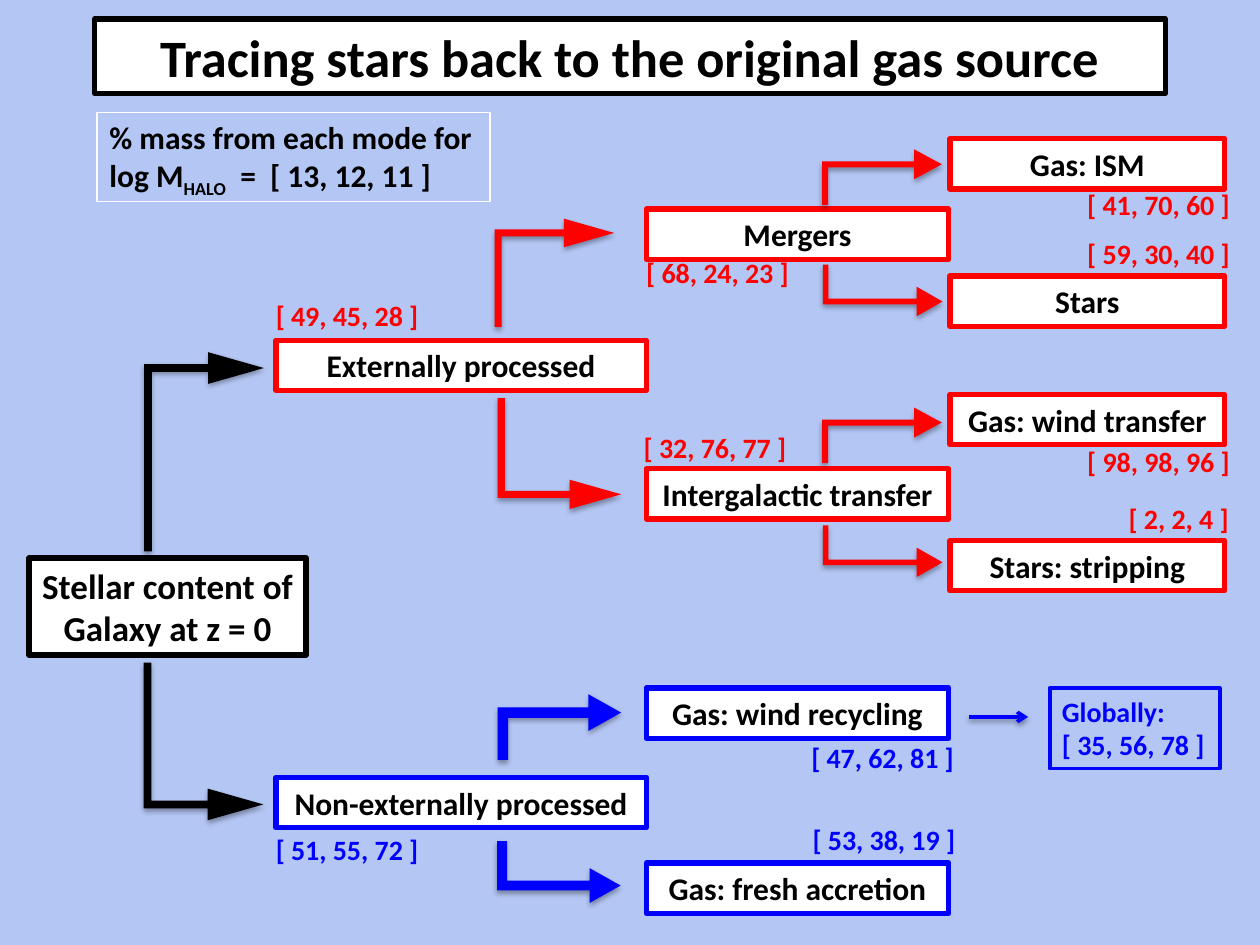
from typing import NamedTuple

import pptx
import pptx.dml.color
import pptx.enum.shapes
import pptx.enum.text
import pptx.oxml
import pptx.oxml.ns
import pptx.util
from pptx.util import Inches

BLACK = pptx.dml.color.RGBColor(0x00, 0x00, 0x00)
WHITE = pptx.dml.color.RGBColor(0xFF, 0xFF, 0xFF)
RED = pptx.dml.color.RGBColor(0xFF, 0x00, 0x00)
BLUE = pptx.dml.color.RGBColor(0x00, 0x00, 0xFF)
BACKGROUND = pptx.dml.color.RGBColor(0xB4, 0xC6, 0xF4)
FONT = "Calibri"
CENTER = pptx.enum.text.PP_ALIGN.CENTER
LEFT = pptx.enum.text.PP_ALIGN.LEFT
SHAPES = pptx.enum.shapes.MSO_SHAPE


class Column(NamedTuple):
    left: float
    width: float


class Stage(NamedTuple):
    text: str
    column: Column
    top: float
    color: pptx.dml.color.RGBColor
    height: float = 0.4
    size: int = 18


class Bend(NamedTuple):
    left: float
    top: float
    width: float
    height: float
    upward: bool
    adjustments: tuple
    color: pptx.dml.color.RGBColor


class Share(NamedTuple):
    text: str
    left: float
    top: float
    color: pptx.dml.color.RGBColor
    width: float = 1.35


ROOT = Column(0.23, 2.2)
PROCESS = Column(2.19, 2.94)
MODE = Column(5.13, 2.4)
ORIGIN = Column(7.54, 2.18)

STAGES = [
    Stage("Stellar content of Galaxy at z = 0", ROOT, 4.43, BLACK, 0.77, 20),
    Stage("Externally processed", PROCESS, 2.7, RED),
    Stage("Non-externally processed", PROCESS, 6.17, BLUE),
    Stage("Gas: ISM", ORIGIN, 1.1, RED),
    Stage("Intergalactic transfer", MODE, 3.72, RED),
    Stage("Gas: wind recycling", MODE, 5.46, BLUE),
    Stage("Gas: fresh accretion", MODE, 6.85, BLUE),
    Stage("Mergers", MODE, 1.66, RED),
    Stage("Stars", ORIGIN, 2.19, RED),
    Stage("Stars: stripping", ORIGIN, 4.29, RED),
    Stage("Gas: wind transfer", ORIGIN, 3.13, RED),
]

LONG = (0.065, 0.132, 0.466)
SHORT_UP = (0.11, 0.27, 0.5)
SHORT_DOWN = (0.11, 0.285, 0.5)
THICK = (0.16, 0.28, 0.5)
BENDS = [
    Bend(4, 3.11, 0.88, 0.98, False, LONG, RED),
    Bend(3.97, 1.69, 0.86, 0.95, True, LONG, RED),
    Bend(0.83, 3.11, 1.58, 0.95, True, LONG, BLACK),
    Bend(0.99, 5.41, 1.25, 0.95, False, LONG, BLACK),
    Bend(6.78, 0.93, 0.44, 0.95, True, SHORT_UP, RED),
    Bend(6.8, 1.83, 0.41, 0.95, False, SHORT_DOWN, RED),
    Bend(6.8, 3.9, 0.41, 0.95, False, SHORT_DOWN, RED),
    Bend(6.78, 2.98, 0.44, 0.95, True, SHORT_UP, RED),
    Bend(4.18, 5.28, 0.52, 0.98, True, THICK, BLUE),
    Bend(4.19, 6.43, 0.49, 0.98, False, THICK, BLUE),
]

SHARES = [
    Share("[ 51, 55, 72 ]", 2.08, 6.56, BLUE),
    Share("[ 49, 45, 28 ]", 2.08, 2.32, RED),
    Share("[ 53, 38, 19 ]", 6.34, 6.48, BLUE),
    Share("[ 47, 62, 81 ]", 6.33, 5.83, BLUE),
    Share("[ 41, 70, 60 ]", 8.52, 1.44, RED),
    Share("[ 59, 30, 40 ]", 8.52, 1.83, RED),
    Share("[ 98, 98, 96 ]", 8.52, 3.48, RED),
    Share("[ 2, 2, 4 ]", 8.85, 3.93, RED, 1.01),
    Share("[ 68, 24, 23 ]", 5.02, 1.98, RED),
    Share("[ 32, 76, 77 ]", 5, 3.37, RED),
]


def style_text(frame, size: float, color, alignment, wrap: bool = True) -> None:
    frame.word_wrap = wrap
    for para in frame.paragraphs:
        para.alignment = alignment
        para.font.name = FONT
        para.font.size = pptx.util.Pt(size)
        para.font.bold = True
        para.font.color.rgb = color


def outline(box, color, weight: float) -> None:
    box.line.color.rgb = color
    box.line.width = pptx.util.Pt(weight)


def add_shadow(properties, opacity: int, distance: float) -> None:
    for empty in properties.findall(pptx.oxml.ns.qn("a:effectLst")):
        properties.remove(empty)
    properties.append(pptx.oxml.parse_xml(
        f'<a:effectLst {pptx.oxml.ns.nsdecls("a")}>'
        f'<a:outerShdw blurRad="{pptx.util.Pt(3.1)}" dist="{pptx.util.Pt(distance)}" '
        'dir="5400000" rotWithShape="0"><a:srgbClr val="000000">'
        f'<a:alpha val="{opacity * 1000}"/></a:srgbClr></a:outerShdw></a:effectLst>'))


def add_stage(page, stage: Stage) -> None:
    box = page.shapes.add_shape(
        SHAPES.RECTANGLE, Inches(stage.column.left), Inches(stage.top),
        Inches(stage.column.width), Inches(stage.height))
    box.shadow.inherit = False
    box.fill.solid()
    box.fill.fore_color.rgb = WHITE
    outline(box, stage.color, 3)
    box.text_frame.text = stage.text
    style_text(box.text_frame, stage.size, BLACK, CENTER)


def add_bend(page, bend: Bend) -> None:
    arrow = page.shapes.add_shape(
        SHAPES.BENT_UP_ARROW, Inches(bend.left), Inches(bend.top),
        Inches(bend.width), Inches(bend.height))
    arrow.rotation = 90
    for index, value in enumerate(bend.adjustments):
        arrow.adjustments[index] = value
    arrow.fill.solid()
    arrow.fill.fore_color.rgb = bend.color
    arrow.line.fill.background()
    properties = arrow._element.spPr
    if bend.upward:
        properties.find(pptx.oxml.ns.qn("a:xfrm")).set("flipH", "1")
    add_shadow(properties, 35, 1.8)


def add_share(page, share: Share) -> None:
    box = page.shapes.add_textbox(
        Inches(share.left), Inches(share.top), Inches(share.width), Inches(0.37))
    box.text_frame.text = share.text
    style_text(box.text_frame, 16, share.color, CENTER, wrap=False)


def add_legend(page) -> None:
    box = page.shapes.add_textbox(Inches(0.77), Inches(0.89), Inches(3.12), Inches(0.71))
    outline(box, WHITE, 0.75)
    frame = box.text_frame
    frame.text = "% mass from each mode for"
    para = frame.add_paragraph()
    for text, baseline in (("log M", 0), ("HALO", -25000), ("  =  [ 13, 12, 11 ]", 0)):
        span = para.add_run()
        span.text = text
        if baseline:
            span._r.get_or_add_rPr().set("baseline", str(baseline))
    style_text(frame, 18, BLACK, LEFT, wrap=False)


def add_global_share(page) -> None:
    box = page.shapes.add_textbox(Inches(8.33), Inches(5.46), Inches(1.35), Inches(0.64))
    outline(box, BLUE, 2.25)
    box.text_frame.text = "Globally:\n[ 35, 56, 78 ]"
    style_text(box.text_frame, 16, BLUE, LEFT, wrap=False)
    arrow = page.shapes.add_connector(
        pptx.enum.shapes.MSO_CONNECTOR.STRAIGHT,
        Inches(7.69), Inches(5.69), Inches(8.16), Inches(5.69))
    outline(arrow, BLUE, 2)
    arrow.line._get_or_add_ln().append(pptx.oxml.parse_xml(
        f'<a:tailEnd {pptx.oxml.ns.nsdecls("a")} type="arrow"/>'))
    add_shadow(arrow._element.spPr, 38, 1.6)


def add_title(page) -> None:
    title = page.shapes.title
    title.left, title.top = Inches(0.75), Inches(0.15)
    title.width, title.height = Inches(8.5), Inches(0.59)
    title.fill.solid()
    title.fill.fore_color.rgb = WHITE
    outline(title, BLACK, 3)
    title.text_frame.text = "Tracing stars back to the original gas source"
    title.text_frame.auto_size = pptx.enum.text.MSO_AUTO_SIZE.NONE
    title.text_frame.vertical_anchor = pptx.enum.text.MSO_ANCHOR.MIDDLE
    style_text(title.text_frame, 30, BLACK, CENTER)


def main() -> None:
    deck = pptx.Presentation()
    deck.slide_width, deck.slide_height = Inches(10), Inches(7.5)
    page = deck.slides.add_slide(deck.slide_layouts.get_by_name("Title Only"))
    page.background.fill.solid()
    page.background.fill.fore_color.rgb = BACKGROUND
    add_title(page)
    for draw, items in ((add_stage, STAGES), (add_bend, BENDS), (add_share, SHARES)):
        for item in items:
            draw(page, item)
    add_legend(page)
    add_global_share(page)
    deck.save("out.pptx")


if __name__ == "__main__":
    main()
